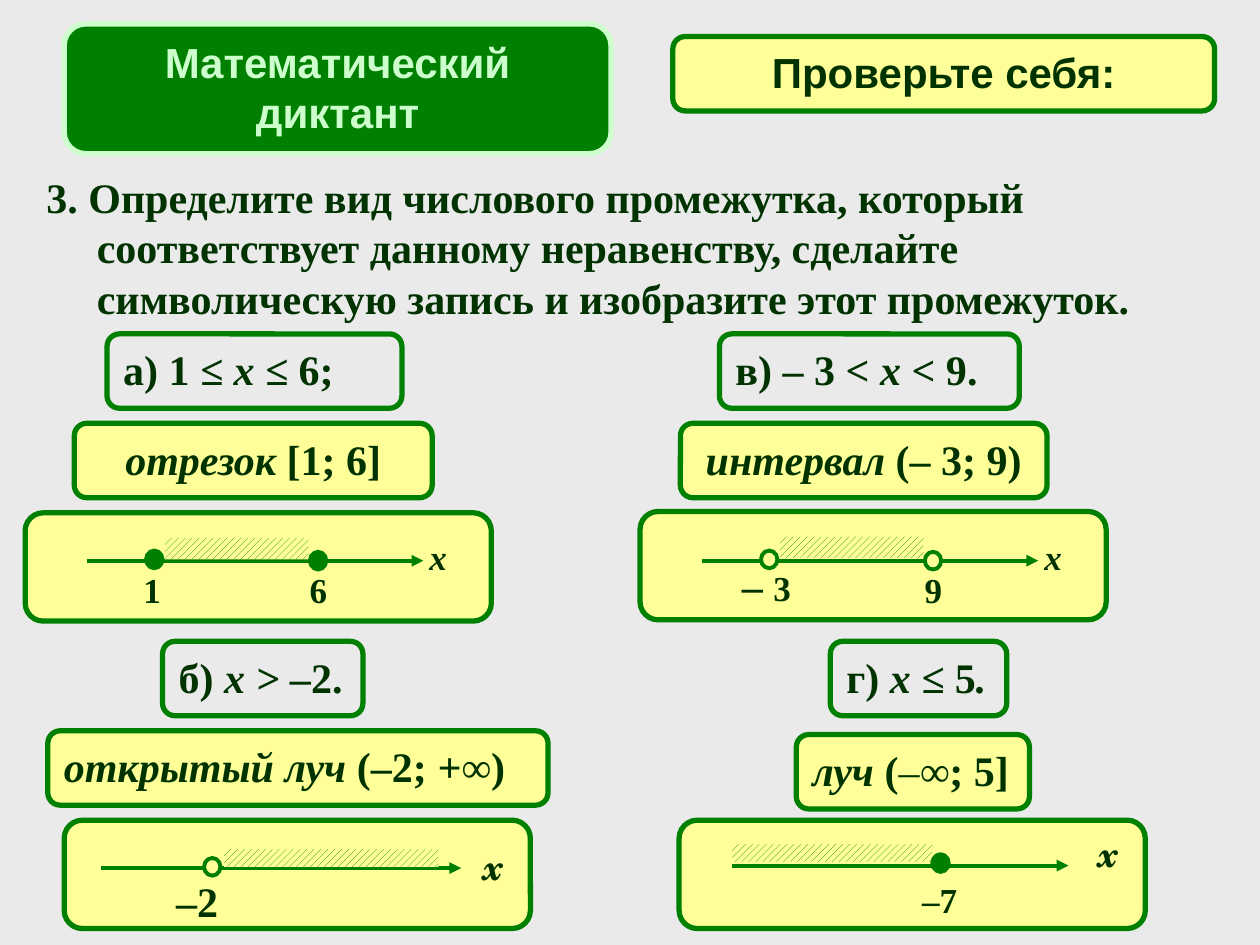
from dataclasses import dataclass

from lxml.etree import SubElement
from pptx import Presentation
from pptx.dml.color import RGBColor
from pptx.enum.dml import MSO_PATTERN
from pptx.enum.shapes import MSO_CONNECTOR, MSO_SHAPE
from pptx.enum.text import MSO_ANCHOR, MSO_AUTO_SIZE, PP_ALIGN
from pptx.oxml.ns import qn
from pptx.util import Inches, Pt

COLORS = {
    "background": "EAEAEA",
    "green": "008000",
    "yellow": "FFFF99",
    "mint": "CCFFCC",
    "ink": "003300",
}
SERIF, SANS, SCHOOL = "Times New Roman", "Arial", "TeX Gyre Schola"


@dataclass
class Run:
    text: str
    italic: bool = False
    bold: bool = True
    size: int = 24
    font: str = SERIF
    color: str = "ink"


def italic(text, **style):
    return Run(text, italic=True, **style)


def small(text):
    return Run(text, size=20)


def rgb(name):
    return RGBColor.from_string(COLORS[name])


class SlideBuilder:
    """Holds the line style and the slide being drawn."""

    frame_width, axis_width = Pt(3), Pt(2.25)
    marker_size = (0.13, 0.14)

    def __init__(self, slide):
        self.slide = slide
        slide.background.fill.solid()
        slide.background.fill.fore_color.rgb = rgb("background")

    def add_runs(self, shape, runs, align=PP_ALIGN.LEFT, wrap=True):
        frame = shape.text_frame
        frame.word_wrap = wrap
        frame.auto_size = MSO_AUTO_SIZE.SHAPE_TO_FIT_TEXT
        frame.vertical_anchor = MSO_ANCHOR.TOP
        paragraph = frame.paragraphs[0]
        paragraph.alignment = align
        for item in runs:
            run = paragraph.add_run()
            run.text = item.text
            font = run.font
            font.name, font.size = item.font, Pt(item.size)
            font.bold, font.italic = item.bold, item.italic
            font.color.rgb = rgb(item.color)
        return paragraph

    def text(self, box, runs, parent=None):
        shapes = (parent or self.slide).shapes
        return self.add_runs(shapes.add_textbox(*map(Inches, box)), runs)

    def shape(self, kind, box, fill=None, line="green", width=None, parent=None):
        shapes = (parent or self.slide).shapes
        shape = shapes.add_shape(kind, *map(Inches, box))
        shape.shadow.inherit = False
        if fill:
            shape.fill.solid()
            shape.fill.fore_color.rgb = rgb(fill)
        else:
            shape.fill.background()
        if line:
            shape.line.color.rgb = rgb(line)
            shape.line.width = width or self.frame_width
        else:
            shape.line.fill.background()
        return shape

    def card(self, box, runs=(), fill="yellow", line="green",
             align=PP_ALIGN.LEFT, wrap=True, parent=None):
        shape = self.shape(MSO_SHAPE.ROUNDED_RECTANGLE, box, fill, line, parent=parent)
        if runs:
            self.add_runs(shape, runs, align, wrap)

    def axis(self, left, right, y, parent):
        connector = parent.shapes.add_connector(
            MSO_CONNECTOR.STRAIGHT, Inches(left), Inches(y), Inches(right), Inches(y))
        connector.line.color.rgb = rgb("green")
        connector.line.width = self.axis_width
        properties = connector._element.spPr
        SubElement(properties.get_or_add_ln(), qn("a:tailEnd"), type="triangle")
        SubElement(properties, qn("a:effectLst"))

    def hatch(self, box, parent):
        shape = self.shape(MSO_SHAPE.RECTANGLE, box, line=None, parent=parent)
        shape.fill.patterned()
        shape.fill.pattern = MSO_PATTERN.WIDE_UPWARD_DIAGONAL
        shape.fill.fore_color.rgb = rgb("green")
        shape.fill.back_color.rgb = rgb("yellow")

    def number_line(self, corner, axis, hatch, markers, marker_fill, labels):
        """Panel with an axis, a hatched interval, end points and labels."""
        group = self.slide.shapes.add_group_shape()
        self.card((*corner, 3.7, 0.86), parent=group)
        self.axis(*axis, group)
        self.hatch(hatch, group)
        for position in markers:
            self.shape(MSO_SHAPE.FLOWCHART_CONNECTOR, (*position, *self.marker_size),
                       marker_fill, width=self.axis_width, parent=group)
        for box, runs in labels:
            self.text(box, runs, group)


def main():
    presentation = Presentation()
    presentation.slide_width, presentation.slide_height = Inches(10), Inches(7.5)
    builder = SlideBuilder(presentation.slides.add_slide(presentation.slide_layouts[6]))
    center = PP_ALIGN.CENTER

    # Headings
    builder.card((0.51, 0.19, 4.34, 1.03),
                 [Run("Математический диктант", font=SANS, color="mint")],
                 fill="green", line="mint", align=center)
    builder.card((5.34, 0.29, 4.3, 0.59), [Run("Проверьте себя:", font=SANS)],
                 align=center)

    # Task with a hanging indent
    task = builder.text((0.27, 1.31, 9.73, 1.3), [Run(
        "3. Определите вид числового промежутка, который соответствует данному "
        "неравенству, сделайте символическую запись и изобразите этот промежуток.")])
    properties = task._p.get_or_add_pPr()
    properties.set("marL", str(Inches(0.4)))
    properties.set("indent", str(-Inches(0.4)))

    # Inequalities: left, top, width, wrap, runs
    inequalities = [
        (0.85, 2.65, 2.34, True, [Run("а) 1 "), italic("≤ x ≤ "), Run("6;")]),
        (5.71, 2.65, 2.38, True, [Run("в) – 3 "), italic("< x < "), Run("9.")]),
        (1.29, 5.09, 1.59, False, [Run("б) "), italic("x > "), Run("–2.")]),
        (6.59, 5.09, 1.4, False, [Run("г) "), italic("x ≤ "), Run("5"), italic(".")]),
    ]
    for left, top, width, wrap, runs in inequalities:
        builder.card((left, top, width, 0.59), runs, fill=None, wrap=wrap)

    # Answers: left, top, width, alignment, wrap, runs
    answers = [
        (0.59, 3.36, 2.84, center, True, [italic("отрезок "), Run("[1; 6]")]),
        (5.4, 3.36, 2.91, center, True, [italic("интервал "), Run("(– 3; 9)")]),
        (0.38, 5.8, 3.97, PP_ALIGN.LEFT, True,
         [italic("открытый луч "), Run("(–2;"), italic(" +∞"), Run(")")]),
        (6.32, 5.83, 1.85, PP_ALIGN.LEFT, False,
         [italic("луч "), Run("("), Run("–", bold=False), italic("∞"), Run("; 5]")]),
    ]
    for left, top, width, align, wrap, runs in answers:
        builder.card((left, top, width, 0.59), runs, align=align, wrap=wrap)

    # Bounded intervals share one layout, shifted to the right
    bounded = [
        (0, 4.07, "green", ((1.04, 4.46, 0.27, 0.43), [small("1")]), "6"),
        (4.88, 4.06, "yellow",
         ((5.79, 4.39, 0.65, 0.5), [Run("– "), small("3")]), "9"),
    ]
    for shift, top, marker_fill, start_label, end in bounded:
        builder.number_line(
            (0.2 + shift, top), (0.69 + shift, 3.36 + shift, 4.45),
            (1.31 + shift, top + 0.2, 1.14, 0.17),
            [(1.16 + shift, 4.37), (2.46 + shift, 4.38)], marker_fill,
            [start_label,
             ((2.36 + shift, 4.46, 0.27, 0.43), [small(end)]),
             ((3.31 + shift, 4.2, 0.27, 0.43), [italic("x", size=20)])])

    # Rays
    axis_name = [italic("x", size=20, font=SCHOOL)]
    builder.number_line(
        (0.51, 6.51), (0.8, 3.66, 6.89), (1.78, 6.74, 1.7, 0.14),
        [(1.62, 6.81)], "yellow",
        [((1.3, 6.9, 0.56, 0.5), [Run("–2")]), ((3.74, 6.66, 0.32, 0.43), axis_name)])
    builder.number_line(
        (5.39, 6.51), (5.81, 8.48, 6.87), (5.81, 6.7, 1.59, 0.14),
        [(7.4, 6.78)], "green",
        [((7.22, 6.92, 0.65, 0.43), [small("–7")]), ((8.62, 6.56, 0.39, 0.43), axis_name)])

    presentation.save("out.pptx")


if __name__ == "__main__":
    main()
